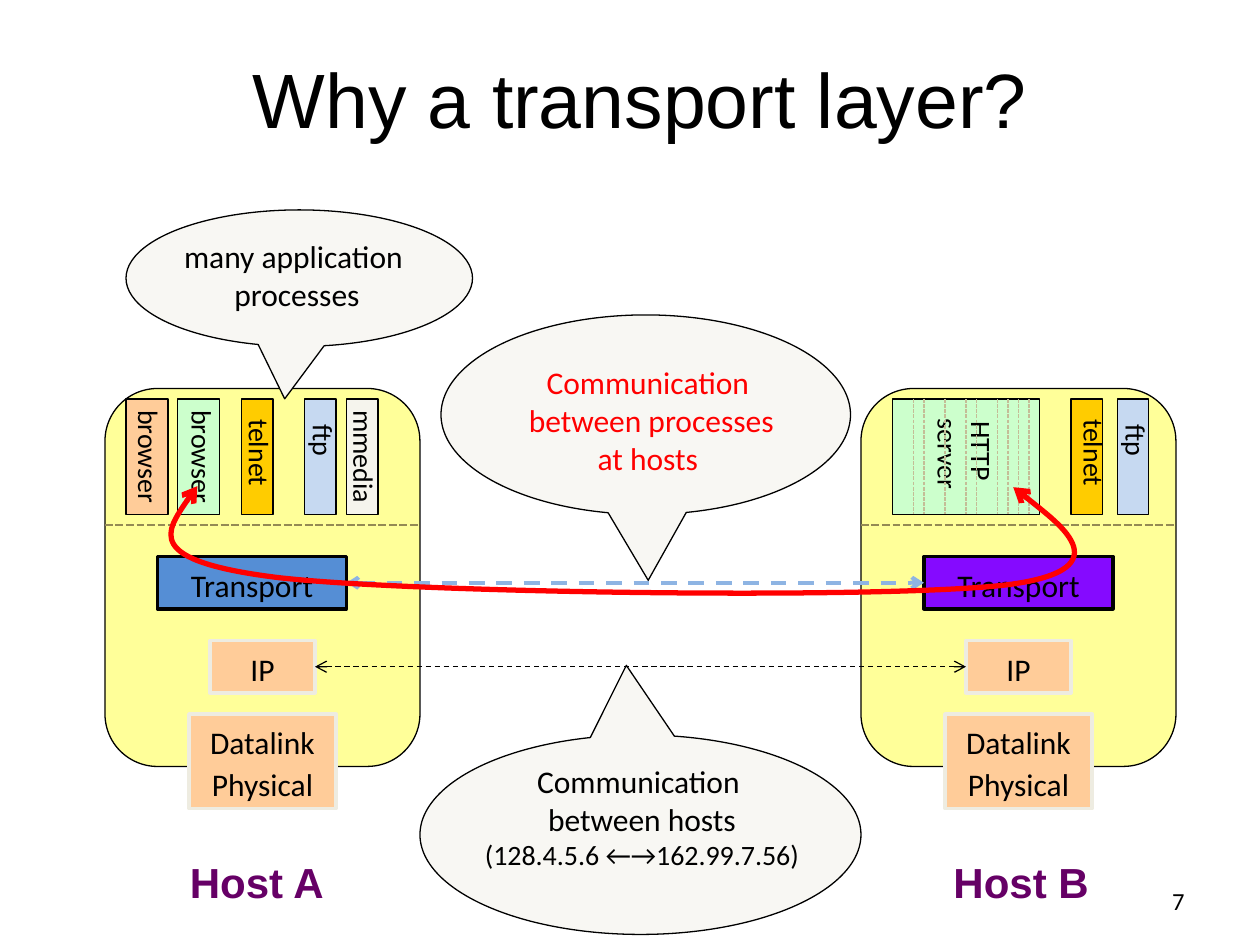
from pptx import Presentation
from pptx.dml.color import RGBColor
from pptx.enum.dml import MSO_LINE
from pptx.enum.shapes import MSO_CONNECTOR, MSO_SHAPE
from pptx.enum.text import MSO_ANCHOR, PP_ALIGN
from pptx.oxml.ns import qn
from pptx.util import Pt
from lxml.etree import SubElement

PX = 7620

prs = Presentation()
prs.slide_width, prs.slide_height = 1200 * PX, 900 * PX
slide = prs.slides.add_slide(prs.slide_layouts[6])
shapes = slide.shapes


def paint(part, fill=None, line=None, width=0.75, dash=None, arrows=False):
    if fill:
        part.fill.solid()
        part.fill.fore_color.rgb = RGBColor.from_string(fill)
    part.line.color.rgb = RGBColor.from_string(line)
    part.line.width = Pt(width)
    if dash:
        part.line.dash_style = dash
    if arrows:
        for end in ("a:headEnd", "a:tailEnd"):
            SubElement(part.line._get_or_add_ln(), qn(end), type="arrow")
    if part._element.spPr.find(qn("a:effectLst")) is None:
        SubElement(part._element.spPr, qn("a:effectLst"))
    return part


def write(part, lines, sizes, font="Calibri", color="000000", bold=False,
          align=PP_ALIGN.CENTER, anchor=MSO_ANCHOR.TOP, spacing=None, wrap=False):
    frame = part.text_frame
    frame.word_wrap = wrap
    frame.vertical_anchor = anchor
    frame.text = "\n".join(lines)
    for paragraph, size in zip(frame.paragraphs, sizes):
        paragraph.alignment = align
        paragraph.line_spacing = spacing
        paragraph.font.name = font
        paragraph.font.size = Pt(size)
        paragraph.font.bold = bold
        paragraph.font.color.rgb = RGBColor.from_string(color)
    return part


title = shapes.add_textbox(60 * PX, 16 * PX, 1120 * PX, 154 * PX)
write(title, ["Why a transport layer? "], [44], font="Arial", anchor=MSO_ANCHOR.MIDDLE, wrap=True)

hosts = [
    ("Host A", 100, 168, 150, "558ED5", [
        ("browser", 120, 40, "FFCC99", 142, 435, 114, 44),
        ("telnet", 230, 30, "FFCC00", 247, 431, 89, 44),
        ("mmedia", 330, 30, "F5F4ED", 347, 435, 114, 44),
        ("ftp", 290, 30, "C6D9F1", 308, 419, 55, 44),
        ("browser", 169, 40, "CCFFCC", 193, 435, 114, 44),
    ]),
    ("Host B", 820, 896, 880, "850AFF", [
        ("telnet", 1020, 30, "FFCC00", 1042, 431, 89, 44),
        ("ftp", 1064, 30, "C6D9F1", 1082, 419, 55, 44),
        ("HTTP \vserver", 850, 140, "CCFFCC", 919, 432, 92, 77),
    ]),
]
layers = {}
for host, left, name_left, transport_left, transport_fill, apps in hosts:
    name = shapes.add_textbox(name_left * PX, 810 * PX, 153 * PX, 60 * PX)
    write(name, [host], [24], font="Arial", color="660066", bold=True)

    body = shapes.add_shape(MSO_SHAPE.ROUNDED_RECTANGLE, left * PX, 370 * PX, 300 * PX, 360 * PX)
    paint(body, "FFFF99", "000000")
    divider = shapes.add_connector(MSO_CONNECTOR.STRAIGHT, left * PX, 500 * PX, (left + 300) * PX, 500 * PX)
    paint(divider, line="948A54", width=1.5, dash=MSO_LINE.SQUARE_DOT)

    for app, x, w, fill, cx, cy, label_w, label_h in apps:
        process = shapes.add_shape(MSO_SHAPE.RECTANGLE, x * PX, 380 * PX, w * PX, 110 * PX)
        paint(process, fill, "000000")
        label = shapes.add_textbox((cx - label_w // 2) * PX, (cy - label_h // 2) * PX, label_w * PX, label_h * PX)
        label.rotation = 90
        write(label, [app], [16])

    for lines, x, y, w, h, fill, border in [
        (["Datalink", "Physical"], left + 80, 680, 140, 90, "FFCC99", "EEECE1"),
        (["IP"], left + 100, 610, 100, 50, "FFCC99", "EEECE1"),
        (["Transport"], transport_left, 530, 180, 50, transport_fill, "000000"),
    ]:
        layer = shapes.add_shape(MSO_SHAPE.RECTANGLE, x * PX, y * PX, w * PX, h * PX)
        paint(layer, fill, border, 2)
        write(layer, lines, [18] * len(lines), anchor=MSO_ANCHOR.MIDDLE, spacing=1.1)
        layers[host, lines[0]] = layer

for x in (870, 880, 900, 920, 930, 950, 960, 970, 980):
    thread = shapes.add_connector(MSO_CONNECTOR.STRAIGHT, x * PX, 380 * PX, x * PX, 490 * PX)
    paint(thread, line="C4BD97", dash=MSO_LINE.SQUARE_DOT)

for layer_name, color, width in [("IP", "000000", 0.75), ("Transport", "8EB4E3", 2.25)]:
    link = shapes.add_connector(MSO_CONNECTOR.STRAIGHT, 0, 0, 0, 0)
    link.begin_connect(layers["Host A", layer_name], 3)
    link.end_connect(layers["Host B", layer_name], 1)
    paint(link, line=color, width=width, dash=MSO_LINE.DASH, arrows=True)

callouts = [
    ((120, 200, 330, 130), (-0.042, 0.884), (162, 220, 235, 85),
     ["many application\v processes"], [18], "000000"),
    ((400, 700, 420, 190), (-0.032, -0.849), (446, 720, 331, 118),
     ["Communication \vbetween hosts", "(128.4.5.6 ←→162.99.7.56)"], [18, 16], "000000"),
    ((420, 300, 390, 190), (0.006, 0.83), (484, 340, 266, 121),
     ["Communication\v between processes", "at hosts"], [18, 18], "FF0000"),
]
for bubble_box, tip, text_box, lines, sizes, color in callouts:
    bubble = shapes.add_shape(MSO_SHAPE.OVAL_CALLOUT, *(n * PX for n in bubble_box))
    bubble.adjustments[0], bubble.adjustments[1] = tip
    paint(bubble, "F8F7F3", "000000")
    remark = shapes.add_textbox(*(n * PX for n in text_box))
    write(remark, lines, sizes, color=color)

left, top, right, bottom = 167, 463, 1013, 565
outline = shapes.build_freeform(left, top, scale=PX)
outline.add_line_segments([(right, bottom)], close=False)
conversation = outline.convert_to_shape()
path = conversation._element.spPr.find(".//" + qn("a:path"))
for step in list(path):
    path.remove(step)
for command, points in [
    ("a:moveTo", [(188, 463)]),
    ("a:cubicBezTo", [(162, 498), (136, 534), (264, 550)]),
    ("a:cubicBezTo", [(392, 565), (842, 571), (959, 557)]),
    ("a:cubicBezTo", [(1076, 542), (965, 464), (965, 464)]),
]:
    step = SubElement(path, qn(command))
    for x, y in points:
        SubElement(step, qn("a:pt"), x=str((x - left) * PX), y=str((y - top) * PX))
path.set("w", str((right - left) * PX))
path.set("h", str((bottom - top) * PX))
conversation.fill.background()
paint(conversation, line="FF0000", width=3, arrows=True)

page_number = shapes.add_textbox(860 * PX, 834 * PX, 280 * PX, 48 * PX)
write(page_number, ["7"], [14], align=PP_ALIGN.RIGHT, anchor=MSO_ANCHOR.MIDDLE, wrap=True)

prs.save("out.pptx")
